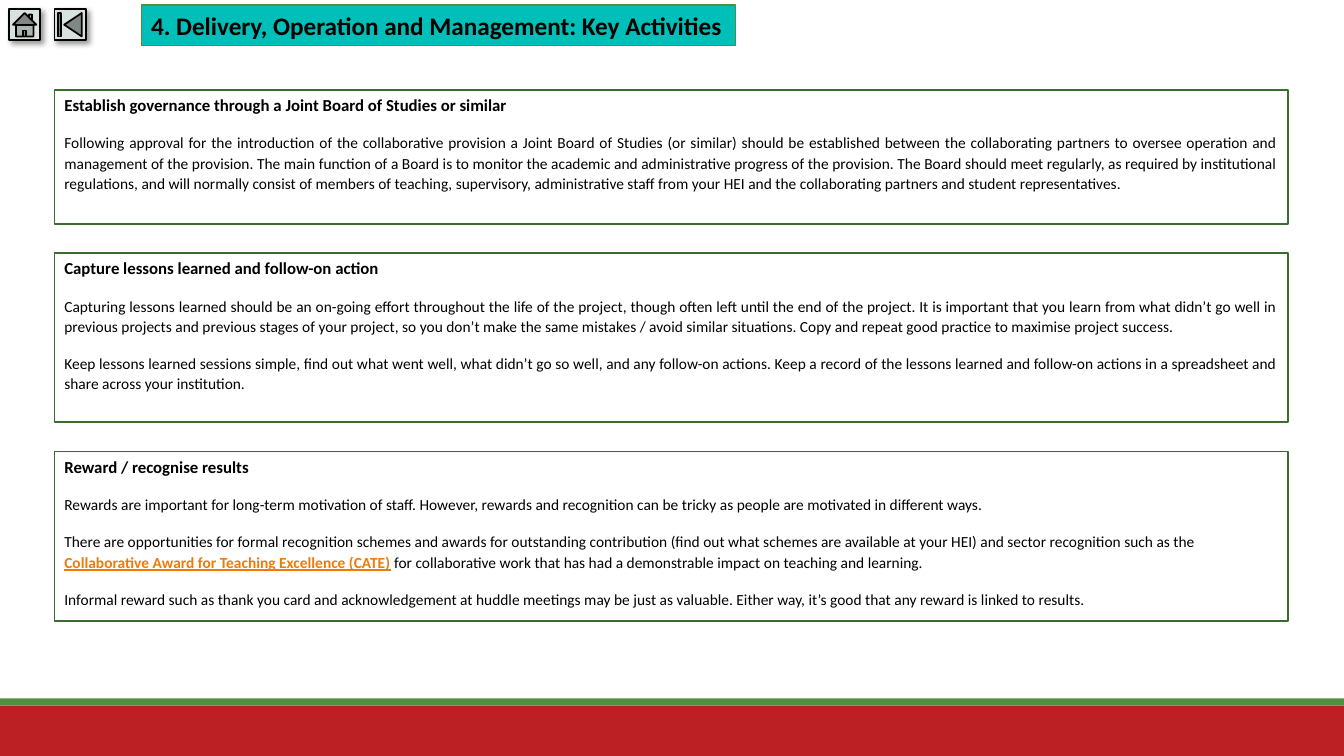
import pptx
import pptx.util
import pptx.dml.color
import pptx.enum.shapes
import pptx.enum.text
import lxml.etree
from dataclasses import dataclass

SHAPE = pptx.enum.shapes.MSO_SHAPE
ALIGN = pptx.enum.text.PP_ALIGN
COLUMNS, ROWS = 133.33, 75  # grid cells across and down the slide


@dataclass(frozen=True)
class Theme:
    font: str = "Calibri"
    ink: str = "000000"
    link: str = "EE7B08"
    button: str = "D7E2DC"
    title_fill: str = "00BEB8"
    card_line: str = "3A6B2F"
    green: str = "4E9040"
    red: str = "BC2024"
    title_size: int = 18
    heading_size: int = 12
    body_size: int = 11
    outline: float = 1.25
    thin_outline: float = 0.75


THEME = Theme()

# Each card: height in rows, heading, body alignment, paragraphs of (text, is_link) runs
CARDS = [
    (13.3, "Establish governance through a Joint Board of Studies or similar", ALIGN.JUSTIFY, [
        [("Following approval for the introduction of the collaborative provision a Joint Board of "
          "Studies (or similar) should be established between the collaborating partners to oversee "
          "operation and management of the provision. The main function of a Board is to monitor the "
          "academic and administrative progress of the provision. The Board should meet regularly, as "
          "required by institutional regulations, and will normally consist of members of teaching, "
          "supervisory, administrative staff from your HEI and the collaborating partners and student "
          "representatives. ", False)],
    ]),
    (16.8, "Capture lessons learned and follow-on action", ALIGN.JUSTIFY, [
        [("Capturing lessons learned should be an on-going effort throughout the life of the project, "
          "though often left until the end of the project. It is important that you learn from what "
          "didn’t go well in previous projects and previous stages of your project, so you don’t make "
          "the same mistakes / avoid similar situations. Copy and repeat good practice to maximise "
          "project success.", False)],
        [("Keep lessons learned sessions simple, find out what went well, what didn’t go so well, and "
          "any follow-on actions. Keep a record of the lessons learned and follow-on actions in a "
          "spreadsheet and share across your institution. ", False)],
    ]),
    (16.8, "Reward / recognise results", ALIGN.LEFT, [
        [("Rewards are important for long-term motivation of staff. However, rewards and recognition "
          "can be tricky as people are motivated in different ways.", False)],
        [("There are opportunities for formal recognition schemes and awards for outstanding "
          "contribution (find out what schemes are available at your HEI) and sector recognition such "
          "as the ", False),
         ("Collaborative Award for Teaching Excellence (CATE)", True),
         (" for collaborative work that has had a demonstrable impact on teaching and learning.", False)],
        [("Informal reward such as thank you card and acknowledgement at huddle meetings may be just "
          "as valuable. Either way, it’s good that any reward is linked to results.", False)],
    ]),
]


def rgb(colour):
    return pptx.dml.color.RGBColor.from_string(colour)


def add_block(slide, box, preset=SHAPE.RECTANGLE, fill=None, line=None, width=THEME.outline):
    """Place a preset shape; box is left, top, width, height in grid cells."""
    block = slide.shapes.add_shape(preset, *(pptx.util.Inches(cells / 10) for cells in box))
    block.shadow.inherit = False
    if fill:
        block.fill.solid()
        block.fill.fore_color.rgb = rgb(fill)
    else:
        block.fill.background()
    if line:
        block.line.color.rgb = rgb(line)
        block.line.width = pptx.util.Pt(width)
    else:
        block.line.fill.background()
    return block


def add_run(paragraph, text, size, colour=THEME.ink, bold=False, underline=False):
    run = paragraph.add_run()
    run.text = text
    run.font.name = THEME.font
    run.font.size = pptx.util.Pt(size)
    run.font.color.rgb = rgb(colour)
    run.font.bold = bold
    run.font.underline = underline


def format_paragraph(paragraph, align=ALIGN.LEFT, spacing=None, around=6):
    paragraph.alignment = align
    paragraph.line_spacing = spacing
    paragraph.space_before = paragraph.space_after = pptx.util.Pt(around)


def add_button(slide, box, preset):
    button = add_block(slide, box, preset, THEME.button, THEME.ink)
    # Soft shadow towards the lower right
    effects = button.element.spPr.find(pptx.oxml.ns.qn("a:effectLst"))
    effects.append(lxml.etree.fromstring(
        f'<a:outerShdw xmlns:a="{pptx.oxml.ns.nsdecls("a").split(chr(34))[1]}" '
        f'blurRad="{pptx.util.Pt(4)}" dist="{pptx.util.Pt(3)}" dir="2700000" algn="tl" '
        f'rotWithShape="0"><a:srgbClr val="{THEME.ink}"><a:alpha val="40000"/></a:srgbClr>'
        '</a:outerShdw>'))


def add_header(slide, box):
    left, top, width, height = box
    # Navigation buttons
    for step, preset in enumerate((SHAPE.ACTION_BUTTON_HOME, SHAPE.ACTION_BUTTON_BEGINNING)):
        add_button(slide, (left + 4.5 * step, top + 0.4, 3.1, 3.1), preset)
    # Title bar
    title = add_block(slide, (left + 13.1, top, width - 13.1, height),
                      fill=THEME.title_fill, line=THEME.green, width=THEME.thin_outline)
    frame = title.text_frame
    frame.word_wrap = True
    frame.auto_size = pptx.enum.text.MSO_AUTO_SIZE.SHAPE_TO_FIT_TEXT
    format_paragraph(frame.paragraphs[0], around=0)
    add_run(frame.paragraphs[0], "4. Delivery, Operation and Management: Key Activities",
            THEME.title_size, bold=True)


def add_card(slide, box, heading, align, body):
    frame = add_block(slide, box, line=THEME.card_line).text_frame
    frame.word_wrap = True
    frame.vertical_anchor = pptx.enum.text.MSO_ANCHOR.TOP
    format_paragraph(frame.paragraphs[0])
    add_run(frame.paragraphs[0], heading, THEME.heading_size, bold=True)
    for runs in body:
        paragraph = frame.add_paragraph()
        format_paragraph(paragraph, align, spacing=1.1)
        for text, is_link in runs:
            add_run(paragraph, text, THEME.body_size, THEME.link if is_link else THEME.ink,
                    bold=is_link, underline=is_link)


def add_activities(slide, box, gap=2.9):
    left, top, width, _ = box
    for height, heading, align, body in CARDS:
        add_card(slide, (left, top, width, height), heading, align, body)
        top += height + gap


def add_footer(slide, box):
    left, top, width, height = box
    stripe = 0.7
    add_block(slide, (left, top + stripe, width, height - stripe), fill=THEME.red)
    add_block(slide, (left, top, width, stripe), fill=THEME.green)


def main():
    deck = pptx.Presentation()
    deck.slide_width = pptx.util.Inches(COLUMNS / 10)
    deck.slide_height = pptx.util.Inches(ROWS / 10)
    slide = deck.slides.add_slide(deck.slide_layouts[6])
    add_footer(slide, (0, ROWS - 5.7, COLUMNS, 5.7))
    add_header(slide, (0.9, 0.5, 72.1, 4))
    add_activities(slide, (5.4, 8.9, 122.4, 52.7))
    deck.save("out.pptx")


if __name__ == "__main__":
    main()
